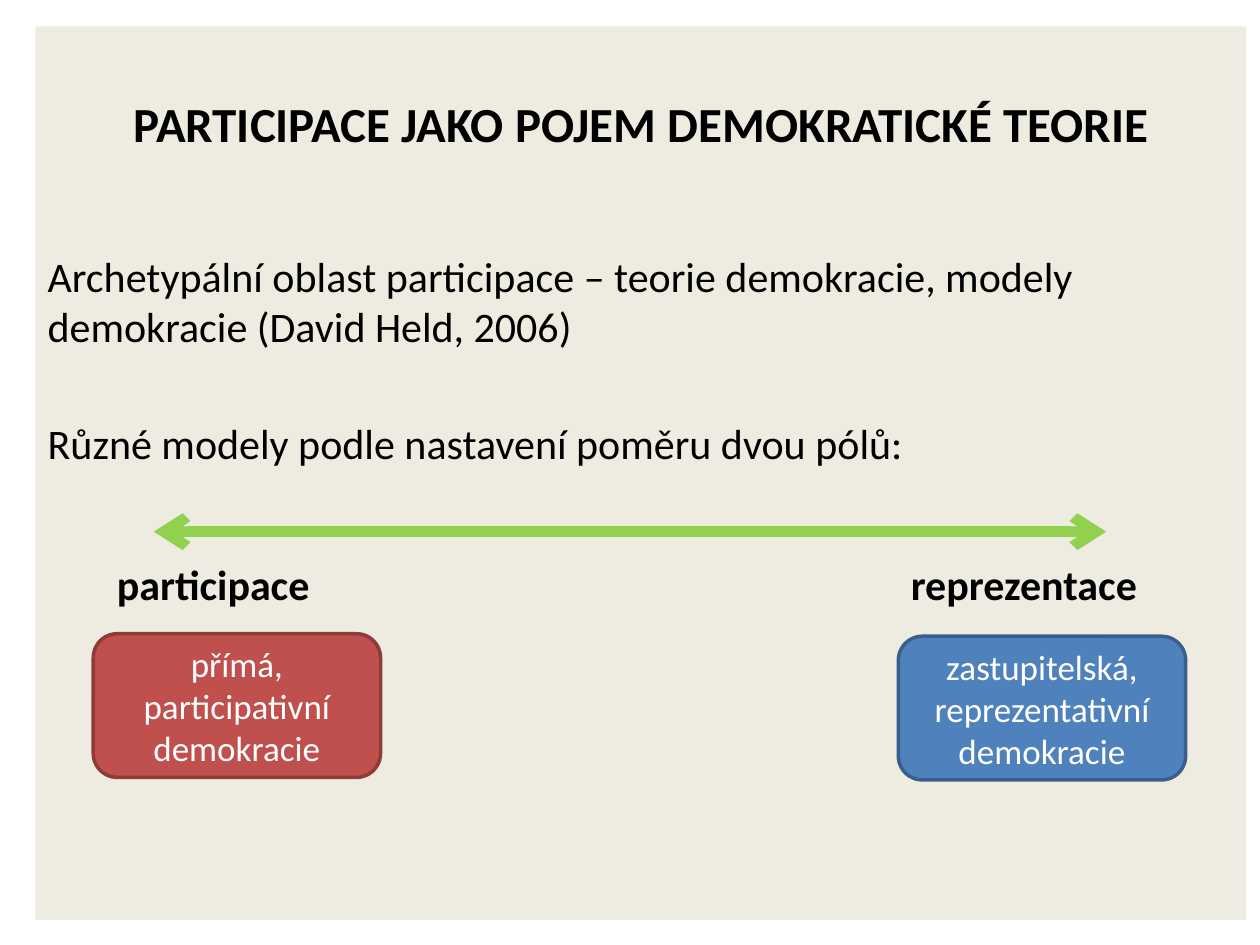
from lxml.etree import SubElement
from pptx import Presentation
from pptx.dml.color import RGBColor
from pptx.enum.shapes import MSO_CONNECTOR, MSO_SHAPE
from pptx.enum.text import MSO_ANCHOR, PP_ALIGN
from pptx.oxml.ns import qn
from pptx.util import Inches, Pt

FONT = "Calibri"
# text, size, bold, alignment, space before
BODY = [
    ("PARTICIPACE JAKO POJEM DEMOKRATICKÉ TEORIE", 28, True, PP_ALIGN.CENTER, 0),
    ("Archetypální oblast participace – teorie demokracie, modely demokracie "
     "(David Held, 2006)", 24, False, PP_ALIGN.LEFT, 56),
    ("Různé modely podle nastavení poměru dvou pólů:", 24, False, PP_ALIGN.LEFT, 38),
]
# label, label left, label width, model, model left, model top, fill, outline
POLES = [
    ("participace", 0.83, 1.73, "přímá, participativní demokracie",
     0.74, 5.03, "C0504D", "8E3B39"),
    ("reprezentace", 7.13, 2.28, "zastupitelská, reprezentativní demokracie",
     7.13, 5.05, "4F81BD", "3A5F8C"),
]
LABEL_TOP, LABEL_HEIGHT = 4.38, 0.5
MODEL_WIDTH, MODEL_HEIGHT = 2.28, 1.14
AXIS_LEFT, AXIS_RIGHT, AXIS_TOP = 1.22, 8.78, 4.22


def color(hex_string):
    return RGBColor.from_string(hex_string)


def style(paragraph, size, bold=False, font_color="000000", align=PP_ALIGN.LEFT):
    paragraph.alignment = align
    for run in paragraph.runs:
        run.font.name = FONT
        run.font.size = Pt(size)
        run.font.bold = bold
        run.font.color.rgb = color(font_color)


def add_box(slide, preset, left, top, width, height, fill, outline=None):
    shape = slide.shapes.add_shape(
        preset, Inches(left), Inches(top), Inches(width), Inches(height))
    shape.shadow.inherit = False
    shape.fill.solid()
    shape.fill.fore_color.rgb = color(fill)
    if outline:
        shape.line.color.rgb = color(outline)
        shape.line.width = Pt(2)
    else:
        shape.line.fill.background()
    return shape


def add_body(slide):
    panel = add_box(slide, MSO_SHAPE.RECTANGLE, 0.28, 0.21, 9.61, 7.09, "EEECE1")
    text_frame = panel.text_frame
    text_frame.word_wrap = True
    text_frame.vertical_anchor = MSO_ANCHOR.TOP
    text_frame.margin_top = Inches(0.53)
    text_frame.text = "\n".join(item[0] for item in BODY)
    for paragraph, (_, size, bold, align, space) in zip(text_frame.paragraphs, BODY):
        style(paragraph, size, bold, align=align)
        paragraph.space_before = Pt(space)


def add_axis(slide):
    axis = slide.shapes.add_connector(
        MSO_CONNECTOR.STRAIGHT, Inches(AXIS_LEFT), Inches(AXIS_TOP),
        Inches(AXIS_RIGHT), Inches(AXIS_TOP))
    axis.line.color.rgb = color("92D050")
    axis.line.width = Pt(6)
    line = axis.line._get_or_add_ln()
    for end in ("a:headEnd", "a:tailEnd"):
        SubElement(line, qn(end), type="arrow")
    SubElement(axis._element.spPr, qn("a:effectLst"))


def add_pole(slide, label, label_left, label_width, model, left, top, fill, outline):
    text_box = slide.shapes.add_textbox(
        Inches(label_left), Inches(LABEL_TOP), Inches(label_width), Inches(LABEL_HEIGHT))
    text_box.text_frame.word_wrap = True
    text_box.text_frame.text = label
    style(text_box.text_frame.paragraphs[0], 24, bold=True)

    box = add_box(slide, MSO_SHAPE.ROUNDED_RECTANGLE, left, top,
                  MODEL_WIDTH, MODEL_HEIGHT, fill, outline)
    box.text_frame.word_wrap = True
    box.text_frame.vertical_anchor = MSO_ANCHOR.MIDDLE
    box.text_frame.text = model
    style(box.text_frame.paragraphs[0], 20, font_color="FFFFFF", align=PP_ALIGN.CENTER)


def main():
    presentation = Presentation()
    presentation.slide_width, presentation.slide_height = Inches(10), Inches(7.5)
    slide = presentation.slides.add_slide(presentation.slide_layouts[6])
    add_body(slide)
    add_axis(slide)
    for pole in POLES:
        add_pole(slide, *pole)
    presentation.save("out.pptx")


if __name__ == "__main__":
    main()
